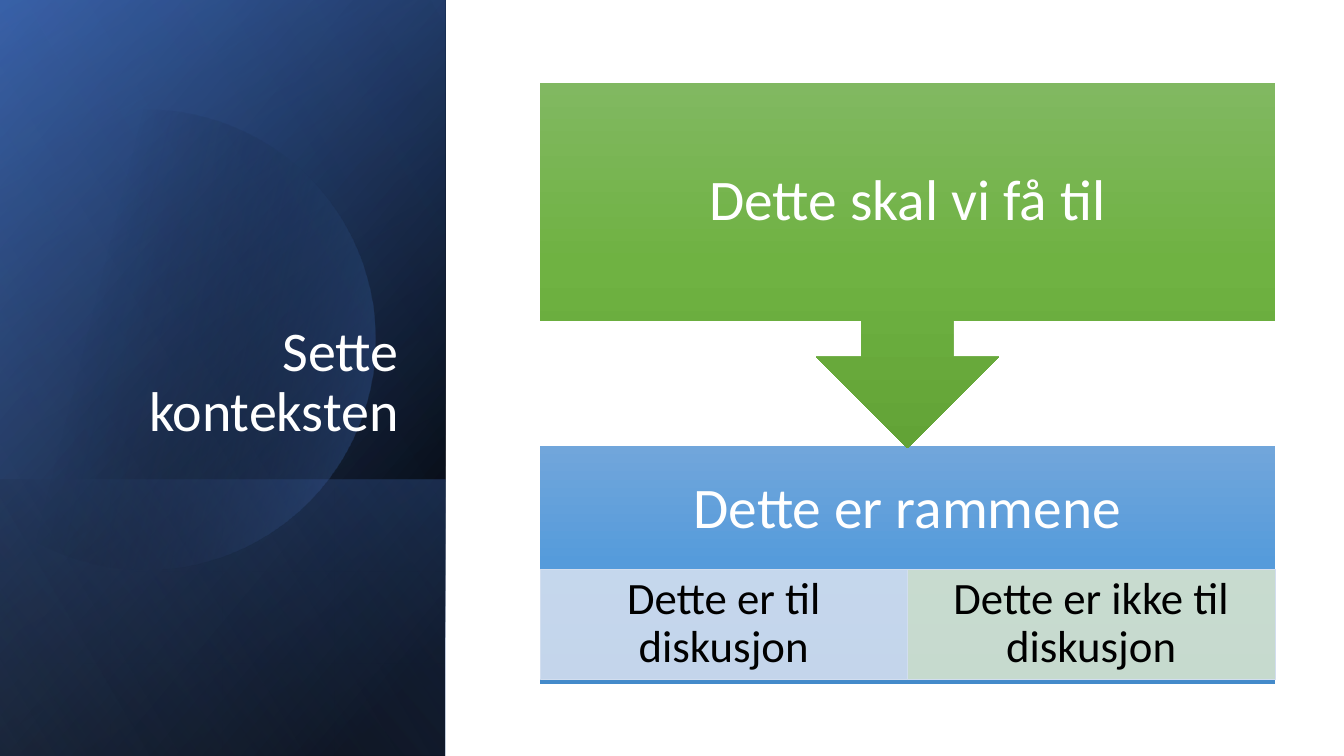
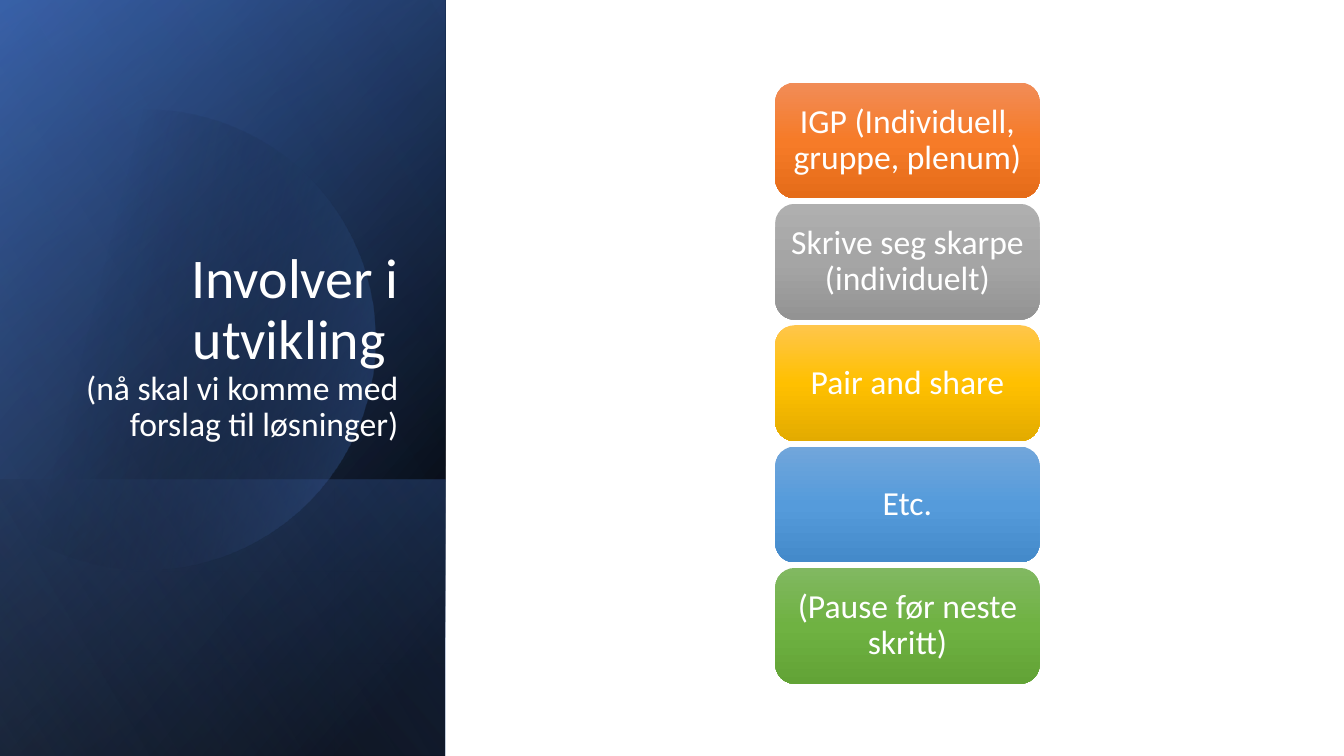
import math

from lxml import etree
from pptx import Presentation
from pptx import util as u
from pptx.dml.color import RGBColor
from pptx.enum import shapes, text
from pptx.oxml import ns

WHITE = RGBColor(0xFF, 0xFF, 0xFF)
BLACK = RGBColor(0x00, 0x00, 0x00)
NAVY = RGBColor(0x2F, 0x55, 0x97)
ROYAL = RGBColor(0x44, 0x72, 0xC4)
MIST = RGBColor(0x8F, 0xAA, 0xDC)
PALE_BLUE = RGBColor(0xD2, 0xDE, 0xEF)
PALE_GREEN = RGBColor(0xD5, 0xE3, 0xCF)


def shades(light, middle, dark):
    return [(0, light, 100), (50, middle, 100), (100, dark, 100)]


ORANGE = shades(RGBColor(0xF1, 0x8C, 0x57), RGBColor(0xF6, 0x7B, 0x28), RGBColor(0xE5, 0x6C, 0x19))
GREY = shades(RGBColor(0xAF, 0xAF, 0xAF), RGBColor(0xA5, 0xA5, 0xA5), RGBColor(0x93, 0x93, 0x93))
GOLD = shades(RGBColor(0xFF, 0xC6, 0x4B), RGBColor(0xFF, 0xC0, 0x00), RGBColor(0xE3, 0xAB, 0x00))
BLUE = shades(RGBColor(0x71, 0xA6, 0xDB), RGBColor(0x55, 0x9B, 0xDB), RGBColor(0x44, 0x8A, 0xCA))
GREEN = shades(RGBColor(0x81, 0xB8, 0x61), RGBColor(0x6F, 0xB2, 0x42), RGBColor(0x62, 0xA3, 0x36))

FONT = "Calibri"
SLIDE_SIZE = (33.87, 19.05)
SIDEBAR = (0, 0, 11.22, 19.05)
CONTENT = (13.61, 2.08, 18.52, 15.15)

KIND = shapes.MSO_SHAPE


def cm(box):
    return [u.Cm(length) for length in box]


def add_alpha(colour_node, percent):
    etree.SubElement(colour_node, ns.qn("a:alpha"), val=str(percent * 1000))


def paint_gradient(shape, stops, angle=90):
    shape.shadow.inherit = False
    shape.line.fill.background()
    shape.fill.background()
    gradient = etree.Element(ns.qn("a:gradFill"), rotWithShape="1")
    stop_list = etree.SubElement(gradient, ns.qn("a:gsLst"))
    for position, colour, opacity in stops:
        stop = etree.SubElement(stop_list, ns.qn("a:gs"), pos=str(position * 1000))
        node = etree.SubElement(stop, ns.qn("a:srgbClr"), val=str(colour))
        if opacity < 100:
            add_alpha(node, opacity)
    etree.SubElement(gradient, ns.qn("a:lin"), ang=str(angle * 60000), scaled="0")
    properties = shape._element.spPr
    properties.replace(properties.find(ns.qn("a:noFill")), gradient)


def paint_tint(shape, colour, opacity=90):
    shape.shadow.inherit = False
    shape.fill.solid()
    shape.fill.fore_color.rgb = colour
    add_alpha(shape._element.spPr.find(".//" + ns.qn("a:srgbClr")), opacity)
    shape.line.color.rgb = PALE_BLUE
    shape.line.width = u.Pt(0.5)


def write(shape, *lines, size=24, sizes=None, colour=WHITE, align=text.PP_ALIGN.CENTER,
          anchor=text.MSO_ANCHOR.MIDDLE, insets=(0.25, 0.13, 0.25, 0.13)):
    frame = shape.text_frame
    frame.word_wrap = True
    frame.vertical_anchor = anchor
    frame.margin_left, frame.margin_top, frame.margin_right, frame.margin_bottom = cm(insets)
    paragraph = frame.paragraphs[0]
    paragraph.alignment = align
    paragraph.line_spacing = 0.9
    for index, line in enumerate(lines):
        if index:
            paragraph.add_line_break()
        run = paragraph.add_run()
        run.text = line
        run.font.name = FONT
        run.font.size = u.Pt(sizes[index] if sizes else size)
        run.font.color.rgb = colour


def add_disc(slide, box):
    left, top, _, _ = box
    centre_x, centre_y, radius = left + 3.68, top + 8.56, 5.79
    cut = math.acos((left - centre_x) / radius)
    steps = 90
    rim = []
    for step in range(steps + 1):
        turn = cut * (2 * step / steps - 1)
        rim.append((u.Cm(centre_x + radius * math.cos(turn)),
                    u.Cm(centre_y + radius * math.sin(turn))))
    builder = slide.shapes.build_freeform(*rim[0], scale=1.0)
    builder.add_line_segments(rim[1:], close=True)
    paint_gradient(builder.convert_to_shape(), [(29, BLACK, 0), (100, ROYAL, 43)], 14)


def add_sidebar(slide, box, *title, sizes):
    left, top, width, height = box
    band_height = 6.96
    band = (left, top + height - band_height, width, band_height)

    def add_layer(area, stops, angle):
        paint_gradient(slide.shapes.add_shape(KIND.RECTANGLE, *cm(area)), stops, angle)

    add_layer(box, [(8, BLACK, 100), (100, NAVY, 100)], 220)
    add_layer(box, [(0, BLACK, 0), (99, ROYAL, 46)], 240)
    add_layer(band, [(2, ROYAL, 29), (100, BLACK, 30)], 140)
    add_disc(slide, box)
    add_layer(box, [(0, BLACK, 0), (99, MIST, 11)], 150)
    heading = slide.shapes.add_textbox(*cm((left + 1.63, top + 4.67, 8.66, 6.65)))
    write(heading, *title, sizes=sizes, align=text.PP_ALIGN.RIGHT, anchor=text.MSO_ANCHOR.BOTTOM)


def add_context_flow(slide, box, goal, frame, options):
    left, top, width, height = box
    stage_height, callout_height, inset = 6, 9.22, 0.81
    frame_top = top + height - stage_height
    header_height, option_height = 0.54 * stage_height, 0.46 * stage_height

    frame_box = slide.shapes.add_shape(
        KIND.RECTANGLE, *cm((left, frame_top, width, stage_height)))
    paint_gradient(frame_box, BLUE)
    write(frame_box, frame, size=41,
          insets=(inset, inset, inset, stage_height - header_height + inset))

    option_width = width / len(options)
    for index, (label, tint) in enumerate(options):
        option = slide.shapes.add_shape(KIND.RECTANGLE, *cm(
            (left + index * option_width, frame_top + 0.52 * stage_height,
             option_width, option_height)))
        paint_tint(option, tint)
        write(option, label, size=32, colour=BLACK, insets=(0.64, 0.1, 0.64, 0.1))

    callout = slide.shapes.add_shape(
        KIND.DOWN_ARROW_CALLOUT, *cm((left, top, width, callout_height)))
    callout.adjustments[3] = stage_height / callout_height
    paint_gradient(callout, GREEN)
    write(callout, goal, size=41, insets=[inset] * 4)


def add_step_stack(slide, box, steps):
    left, top, width, height = box
    gap, step_width = 0.14, 6.66
    step_height = (height - gap * (len(steps) - 1)) / len(steps)
    for index, (label, stops) in enumerate(steps):
        step = slide.shapes.add_shape(KIND.ROUNDED_RECTANGLE, *cm(
            (left + (width - step_width) / 2, top + index * (step_height + gap),
             step_width, step_height)))
        paint_gradient(step, stops)
        write(step, label)


def main():
    deck = Presentation()
    deck.slide_width, deck.slide_height = cm(SLIDE_SIZE)
    blank = deck.slide_layouts[6]

    context = deck.slides.add_slide(blank)
    add_sidebar(context, SIDEBAR, "Sette konteksten", sizes=[40])
    add_context_flow(context, CONTENT, "Dette skal vi få til", "Dette er rammene", [
        ("Dette er til diskusjon", PALE_BLUE),
        ("Dette er ikke til diskusjon", PALE_GREEN),
    ])

    involve = deck.slides.add_slide(blank)
    add_sidebar(involve, SIDEBAR, "Involver i utvikling ",
                "(nå skal vi komme med forslag til løsninger)", sizes=[40, 24])
    add_step_stack(involve, CONTENT, [
        ("IGP (Individuell, gruppe, plenum)", ORANGE),
        ("Skrive seg skarpe (individuelt)", GREY),
        ("Pair and share", GOLD),
        ("Etc.", BLUE),
        ("(Pause før neste skritt)", GREEN),
    ])

    deck.save("out.pptx")


if __name__ == "__main__":
    main()
